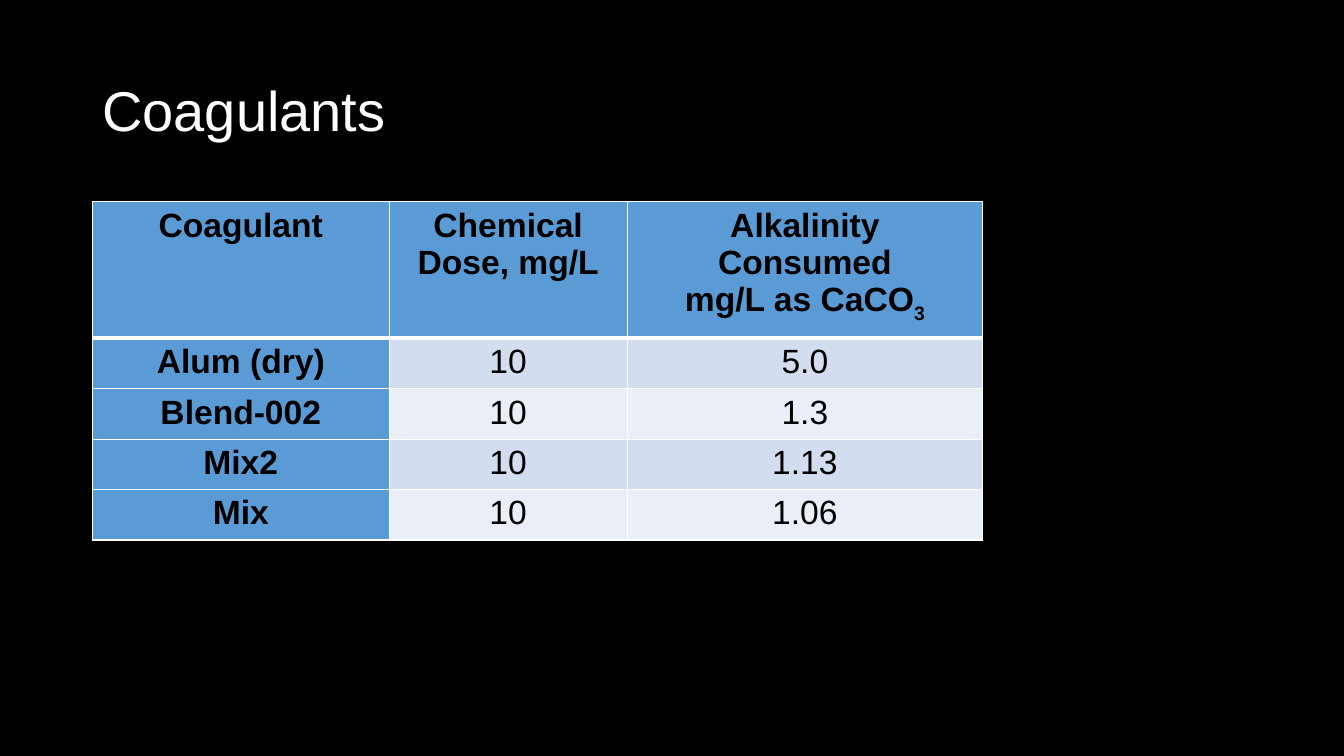
from lxml.etree import SubElement
from pptx import Presentation
from pptx.dml.color import RGBColor as Rgb
from pptx.enum.text import MSO_ANCHOR as Anchor, PP_ALIGN as Align
from pptx.oxml.ns import qn
from pptx.util import Pt

COLORS = {
    "background": "000000",
    "title": "FFFFFF",
    "text": "000000",
    "border": "FFFFFF",
    "heading": "5B9BD5",
    "odd": "D2DEEF",
    "even": "EAEFF7",
}
HEADINGS = [
    ["Coagulant"],
    ["Chemical", "Dose, mg/L"],
    ["Alkalinity", "Consumed", "mg/L as CaCO_3"],
]
DOSES = [
    ("Alum (dry)", "10", "5.0"),
    ("Blend-002", "10", "1.3"),
    ("Mix2", "10", "1.13"),
    ("Mix", "10", "1.06"),
]
COLUMN_WIDTHS = [212, 170, 254]
ROW_HEIGHT = 29.5


class SlideBuilder:
    font_name = "Arial"

    def __init__(self, deck):
        self.slide = deck.slides.add_slide(deck.slide_layouts[6])
        self.fill(self.slide.background, "background")

    def fill(self, target, color):
        target.fill.solid()
        target.fill.fore_color.rgb = Rgb.from_string(COLORS[color])

    def span(self, para, text, size, color, bold=False):
        span = para.add_run()
        span.text = text
        formats = {"name": self.font_name, "size": Pt(size), "bold": bold}
        for name, value in formats.items():
            setattr(span.font, name, value)
        span.font.color.rgb = Rgb.from_string(COLORS[color])
        return span

    def title(self, text, left, top, width, height):
        box = self.slide.shapes.add_textbox(Pt(left), Pt(top), Pt(width), Pt(height))
        formats = {"word_wrap": True, "vertical_anchor": Anchor.MIDDLE}
        for name, value in formats.items():
            setattr(box.text_frame, name, value)
        para = box.text_frame.paragraphs[0]
        para.line_spacing = 0.9
        self.span(para, text, 40, "title")

    def borders(self, cell, widths):
        properties = cell._tc.get_or_add_tcPr()
        for index, (side, width) in enumerate(widths.items()):
            line = SubElement(properties, qn(f"a:ln{side}"), w=str(Pt(width)))
            solid = SubElement(line, qn("a:solidFill"))
            SubElement(solid, qn("a:srgbClr"), val=COLORS["border"])
            properties.insert(index, line)

    def cell(self, cell, lines, color, bold):
        for index, line in enumerate(lines):
            frame = cell.text_frame
            para = frame.add_paragraph() if index else frame.paragraphs[0]
            para.alignment = Align.CENTER
            text, _, subscript = line.partition("_")
            self.span(para, text, 24, "text", bold)
            if subscript:
                span = self.span(para, subscript, 24, "text", bold)
                span.font._element.set("baseline", "-25000")
        self.fill(cell, color)

    def table(self, rows, left, top, widths, height, row_height):
        frame = self.slide.shapes.add_table(
            len(rows), len(widths), Pt(left), Pt(top), Pt(sum(widths)), Pt(height)
        )
        table = frame.table
        for column, width in zip(table.columns, widths):
            column.width = Pt(width)
        for row in table.rows:
            row.height = Pt(row_height)
        frame.height = Pt(height)
        formats = {"first_row": True, "first_col": True, "horz_banding": True}
        for name, value in formats.items():
            setattr(table, name, value)
        for row, values in enumerate(rows):
            for column, lines in enumerate(values):
                cell = table.cell(row, column)
                heading = row == 0 or column == 0
                band = "odd" if row % 2 else "even"
                self.cell(cell, lines, "heading" if heading else band, heading)
                edge = {"T": 3 if row == 1 else 1, "B": 3 if row == 0 else 1}
                self.borders(cell, {"L": 1, "R": 1, **edge})


def main():
    deck = Presentation()
    deck.slide_width, deck.slide_height = Pt(960), Pt(540)
    builder = SlideBuilder(deck)
    builder.title("Coagulants", 66, 28.8, 828, 104.4)
    rows = [HEADINGS] + [[[value] for value in dose] for dose in DOSES]
    builder.table(rows, 66, 144, COLUMN_WIDTHS, 237.6, ROW_HEIGHT)
    deck.save("out.pptx")


if __name__ == "__main__":
    main()
